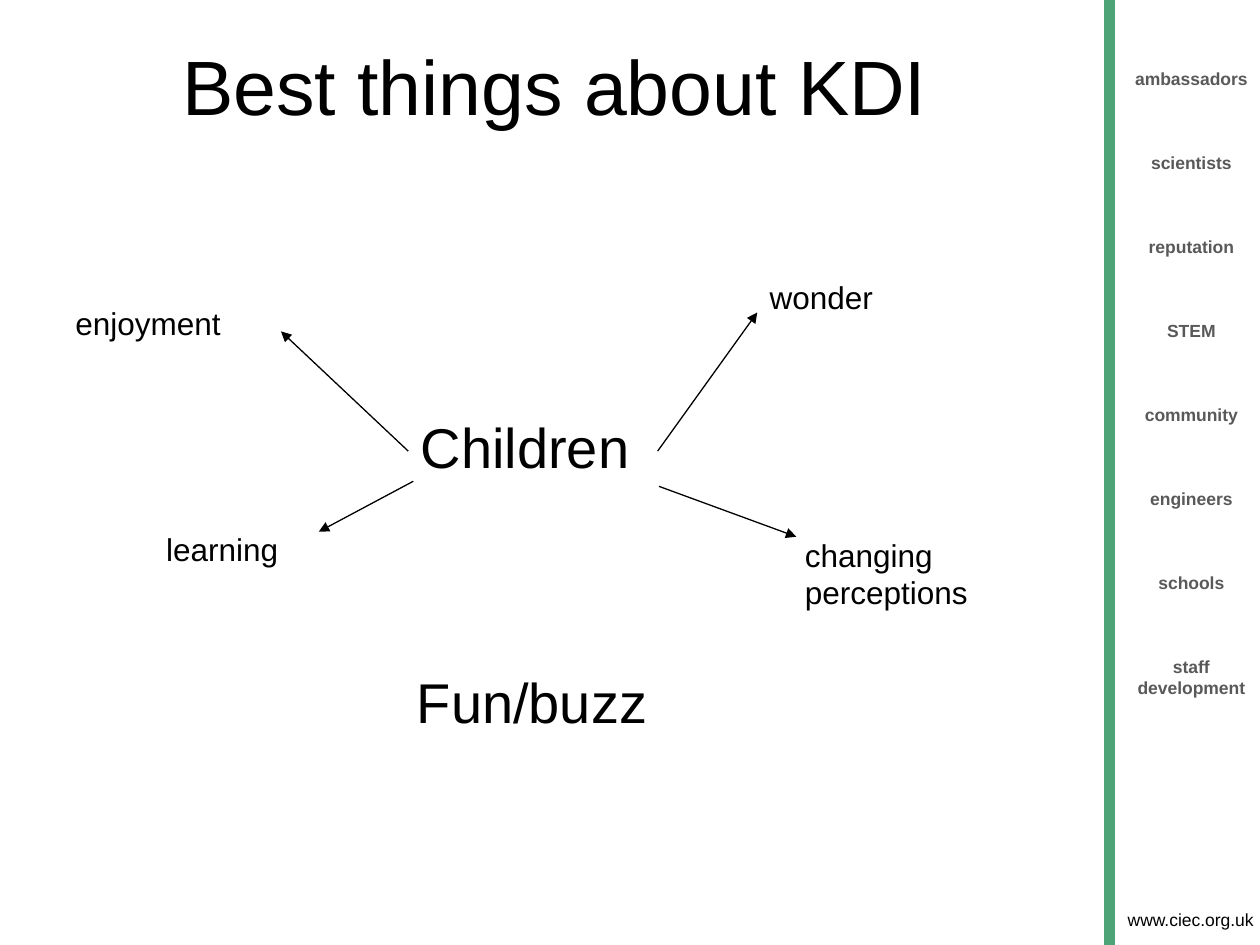
"""Build the slide on the best things about KDI."""
from lxml import etree
from pptx import Presentation
from pptx.dml.color import RGBColor
from pptx.enum.shapes import MSO_CONNECTOR, MSO_SHAPE
from pptx.enum.text import MSO_ANCHOR, MSO_AUTO_SIZE, PP_ALIGN
from pptx.oxml.ns import qn
from pptx.util import Inches, Pt

CENTER, LEFT = PP_ALIGN.CENTER, PP_ALIGN.LEFT
TOP, MIDDLE = MSO_ANCHOR.TOP, MSO_ANCHOR.MIDDLE
RECTANGLE, STRAIGHT = MSO_SHAPE.RECTANGLE, MSO_CONNECTOR.STRAIGHT
NO_FIT = MSO_AUTO_SIZE.NONE

WIDTH, HEIGHT = 10, 7.5
BLACK, GREY, GREEN = "000000", "595959", "4EA477"
TITLE = "Best things about KDI"
TITLE_BOX = (0.5, 0.05, 7.81, 1.25)
THEMES = ["ambassadors", "scientists", "reputation", "STEM", "community",
          "engineers", "schools", "staff development"]
THEMES_BOX = (8.85, 0.49, 1.21, 6.66)
THEME_GAP = 36
ADDRESS = "www.ciec.org.uk"
ADDRESS_BOX = (8.7, 7.16, 1.5, 0.27)
STRIPE_BOX = (8.78, 0, 0.06, HEIGHT)
IDEAS = [
    ("Children", 32, (3.24, 3.17, 1.98, 0.82)),
    ("enjoyment", 18, (0.5, 2.31, 1.73, 0.64)),
    ("wonder", 18, (6.01, 2.11, 1.41, 0.73)),
    ("learning", 18, (1.22, 4.11, 1.26, 0.82)),
    ("changing perceptions", 18, (6.29, 4.15, 1.73, 1.05)),
    ("Fun/buzz", 32, (3.21, 5.2, 2.05, 1.05)),
]
ARROWS = [
    ((3.24, 3.58), (2.23, 2.63)),
    ((5.22, 3.58), (6.01, 2.48)),
    ((3.28, 3.82), (2.53, 4.22)),
    ((5.23, 3.86), (6.32, 4.26)),
]


def color(value):
    return RGBColor.from_string(value)


def inches(values):
    return [Inches(value) for value in values]


def set_all(target, values):
    for name, value in values.items():
        setattr(target, name, value)


def write(shape, texts, size, align=LEFT, anchor=TOP, inset=0.05,
          ink=BLACK, bold=False, gap=0):
    frame = shape.text_frame
    set_all(frame, {
        "word_wrap": True, "auto_size": NO_FIT, "vertical_anchor": anchor,
        "margin_left": Inches(0.1), "margin_right": Inches(0.1),
        "margin_top": Inches(inset), "margin_bottom": Inches(inset)})
    for index, text in enumerate(texts):
        paragraph = frame.add_paragraph() if index else frame.paragraphs[0]
        set_all(paragraph, {"alignment": align,
                            "space_before": Pt(gap if index else 0)})
        run = paragraph.add_run()
        run.text = text
        set_all(run.font, {"name": "Arial", "size": Pt(size), "bold": bold})
        run.font.color.rgb = color(ink)


def add_text(slide, box, texts, size, **format_values):
    write(slide.shapes.add_textbox(*inches(box)), texts, size, **format_values)


def add_stripe(slide):
    stripe = slide.shapes.add_shape(RECTANGLE, *inches(STRIPE_BOX))
    stripe.shadow.inherit = False
    stripe.fill.solid()
    stripe.fill.fore_color.rgb = color(GREEN)
    stripe.line.color.rgb = color(GREEN)
    stripe.line.width = Pt(2)


def add_arrow(slide, start, end):
    arrow = slide.shapes.add_connector(STRAIGHT, *inches(start + end))
    arrow.line.color.rgb = color(BLACK)
    arrow.line.width = Pt(0.75)
    properties = arrow.element.spPr
    etree.SubElement(properties.find(qn("a:ln")), qn("a:tailEnd"), type="triangle")
    etree.SubElement(properties, qn("a:effectLst"))


def main():
    presentation = Presentation()
    set_all(presentation, {"slide_width": Inches(WIDTH),
                           "slide_height": Inches(HEIGHT)})
    slide = presentation.slides.add_slide(presentation.slide_layouts[5])
    add_stripe(slide)
    add_text(slide, ADDRESS_BOX, [ADDRESS], 10, align=CENTER, anchor=MIDDLE)
    add_text(slide, THEMES_BOX, THEMES, 10, align=CENTER, ink=GREY, bold=True,
             gap=THEME_GAP)
    title = slide.shapes.title
    set_all(title, dict(zip(("left", "top", "width", "height"), inches(TITLE_BOX))))
    write(title, [TITLE], 44, align=CENTER, anchor=MIDDLE)
    for text, size, box in IDEAS:
        add_text(slide, box, [text], size, inset=0.1)
    for start, end in ARROWS:
        add_arrow(slide, start, end)
    presentation.save("out.pptx")


if __name__ == "__main__":
    main()
